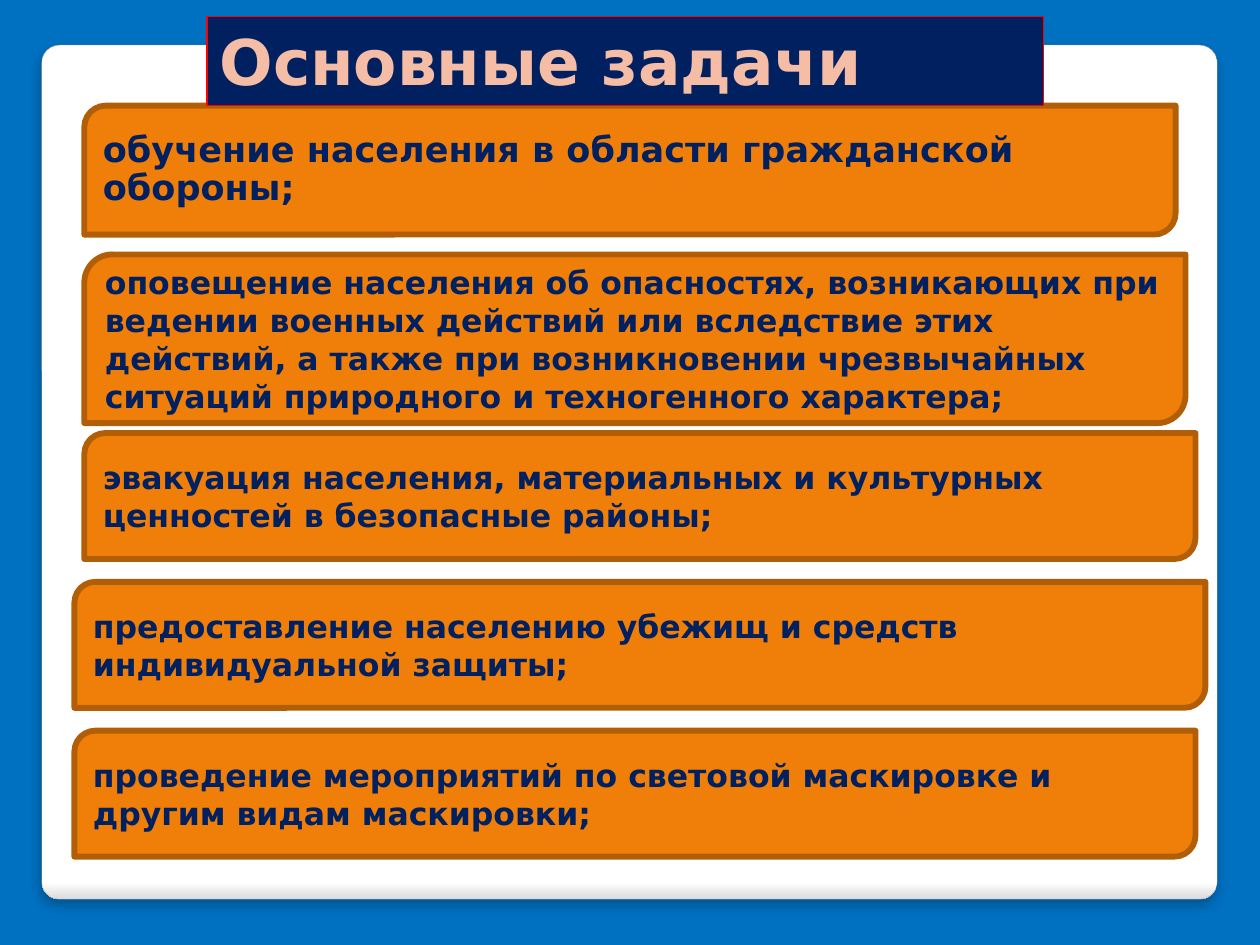
from lxml.etree import SubElement
from pptx import Presentation
from pptx.dml.color import RGBColor
from pptx.enum.shapes import MSO_SHAPE as Shape
from pptx.enum.text import MSO_ANCHOR as Anchor, MSO_AUTO_SIZE as AutoSize, PP_ALIGN as Align
from pptx.oxml.ns import qn
from pptx.util import Cm, Pt

FONT = "DejaVu Sans"
NAVY = "002060"
TASKS = [
    ((1.7, 2.13, 22, 2.6), 20, "обучение населения в области гражданской обороны;"),
    ((1.7, 5.13, 22.2, 3.4), 18,
     "оповещение населения об опасностях, возникающих при ведении военных действий "
     "или вследствие этих действий, а также при возникновении чрезвычайных ситуаций "
     "природного и техногенного характера;"),
    ((1.7, 8.73, 22.4, 2.54), 18,
     "эвакуация населения, материальных и культурных ценностей в безопасные районы;"),
    ((1.5, 11.73, 22.8, 2.54), 18,
     "предоставление населению убежищ и средств индивидуальной защиты;"),
    ((1.5, 14.73, 22.6, 2.54), 18,
     "проведение мероприятий по световой маскировке и другим видам маскировки;"),
]


def color(value):
    return RGBColor.from_string(value)


def paint(shape, fill, line, width):
    shape.fill.solid()
    shape.fill.fore_color.rgb = color(fill)
    shape.line.color.rgb = color(line)
    shape.line.width = Pt(width)


def write(shape, text, size, ink, anchor):
    frame = shape.text_frame
    frame.word_wrap = True
    frame.auto_size = AutoSize.NONE
    frame.vertical_anchor = anchor
    para = frame.paragraphs[0]
    para.text = text
    para.alignment = Align.LEFT
    para.font.name = FONT
    para.font.size = Pt(size)
    para.font.bold = True
    para.font.color.rgb = color(ink)
    return para


def add_panel(page, box):
    panel = page.shapes.add_shape(Shape.ROUNDED_RECTANGLE, *map(Cm, box))
    panel.adjustments[0] = 0.021
    panel.fill.gradient()
    panel.fill.gradient_angle = 270
    for stop, position, value in zip(
            panel.fill.gradient_stops, (0.98, 1), ("FFFFFF", "DADADA")):
        stop.position = position
        stop.color.rgb = color(value)
    panel.line.color.rgb = color("A4A4A4")
    panel.line.width = Pt(0.16)
    panel.shadow.inherit = False
    effects = panel.element.spPr.find(qn("a:effectLst"))
    shadow = SubElement(effects, qn("a:outerShdw"), blurRad=str(Pt(6)),
                        dist=str(Pt(4)), dir="5400000", algn="t", rotWithShape="0")
    black = SubElement(shadow, qn("a:srgbClr"), val="000000")
    SubElement(black, qn("a:alpha"), val="25000")


def add_task(page, box, size, text):
    card = page.shapes.add_shape(Shape.ROUND_2_DIAG_RECTANGLE, *map(Cm, box))
    card.shadow.inherit = False
    paint(card, "F07F09", "B25E07", 3.35)
    return write(card, text, size, NAVY, Anchor.MIDDLE)


def place_title(page, box, text):
    title = page.shapes.title
    title.left, title.top, title.width, title.height = map(Cm, box)
    paint(title, NAVY, "FF0000", 0.75)
    write(title, text, 36, "F5BDA6", Anchor.TOP)
    page.shapes.element.append(title.element)


def main():
    deck = Presentation()
    deck.slide_width, deck.slide_height = Cm(25.4), Cm(19.05)
    page = deck.slides.add_slide(deck.slide_layouts[5])
    page.background.fill.solid()
    page.background.fill.fore_color.rgb = color("0070C0")

    add_panel(page, (0.84, 0.91, 23.7, 17.22))
    paras = [add_task(page, *task) for task in TASKS]
    paras[0].line_spacing = 0.9
    place_title(page, (4.17, 0.33, 16.87, 1.8), "Основные задачи")

    deck.save("out.pptx")


if __name__ == "__main__":
    main()
